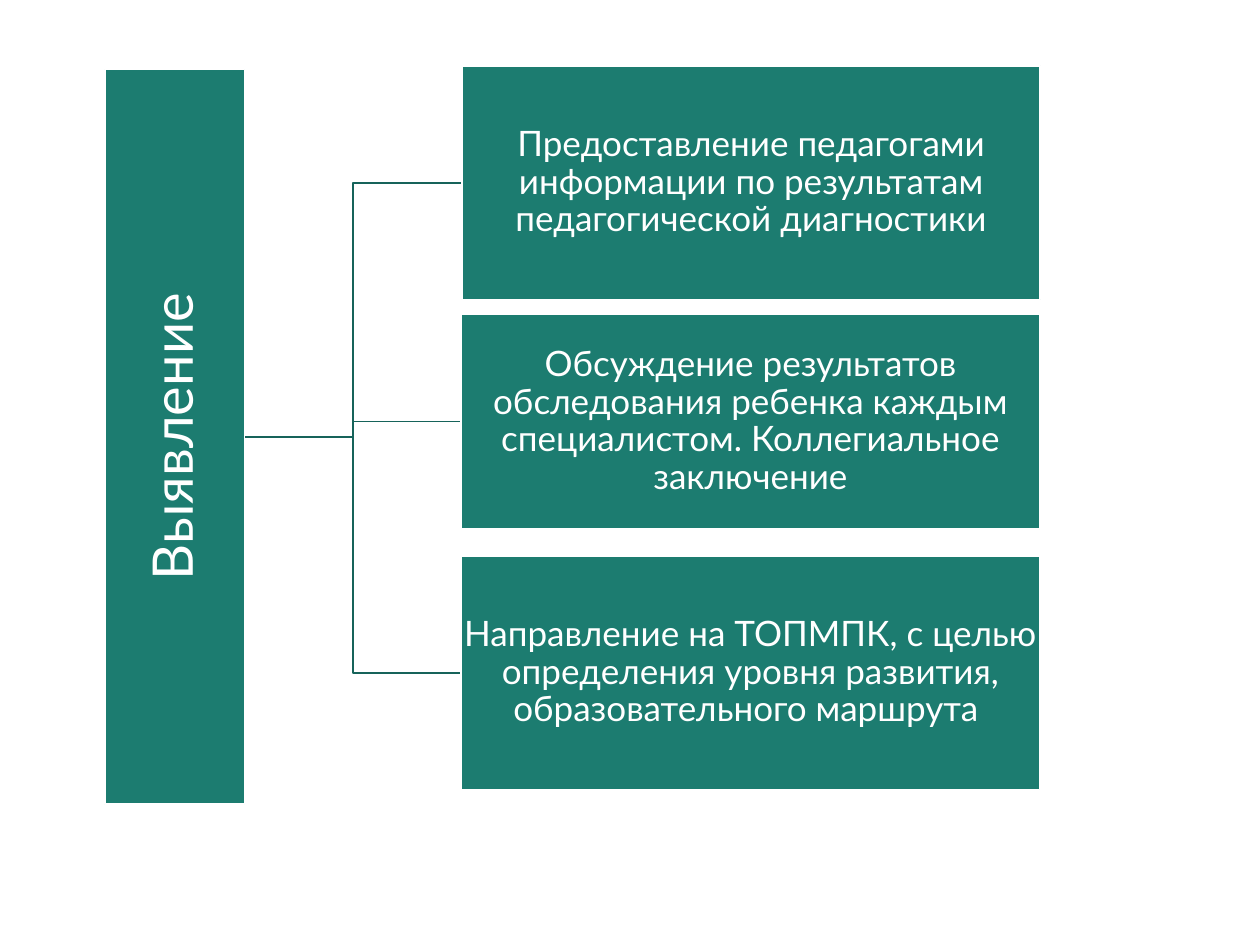
"""Build a slide with a vertical heading branching to three steps."""
from dataclasses import dataclass

import pptx
import pptx.dml.color
import pptx.enum.shapes
import pptx.enum.text
import pptx.util

Pt = pptx.util.Pt
FONT = "Lato"
TEAL = "1C7C70"
DARK_TEAL = "16635A"
WHITE = "FFFFFF"


@dataclass(frozen=True)
class Box:
    text: str
    left: float
    top: float
    width: float
    height: float
    font_size: float = 20
    inset: float = 0.9
    rotation: float = 0

    @property
    def center_x(self) -> float:
        return self.left + self.width / 2

    @property
    def center_y(self) -> float:
        return self.top + self.height / 2


STEP_LEFT, STEP_WIDTH = 263.6, 330.5
HEADING = Box("Выявление", -110.1, 209.6, 419.8, 79.9, 32, 1.6, 270)
STEPS = [
    Box("Предоставление педагогами информации по результатам педагогической диагностики",
        STEP_LEFT + 0.4, 37.6, STEP_WIDTH, 133.6),
    Box("Обсуждение результатов обследования ребенка каждым специалистом. "
        "Коллегиальное заключение",
        STEP_LEFT, 179.4, STEP_WIDTH, 123),
    Box("Направление на ТОПМПК, с целью определения уровня развития, "
        "образовательного маршрута ",
        STEP_LEFT, 317.6, STEP_WIDTH, 133.6),
]


def color(value: str) -> pptx.dml.color.RGBColor:
    return pptx.dml.color.RGBColor.from_string(value)


def set_line(shape, value: str) -> None:
    shape.shadow.inherit = False
    shape.line.color.rgb = color(value)
    shape.line.width = Pt(1)


def add_branch(slide, heading: Box, step: Box) -> None:
    start_x = heading.center_x + heading.height / 2
    middle_x = (start_x + step.left) / 2
    builder = slide.shapes.build_freeform(Pt(start_x), Pt(heading.center_y))
    corners = [(middle_x, heading.center_y), (middle_x, step.center_y),
               (step.left, step.center_y)]
    builder.add_line_segments([(Pt(x), Pt(y)) for x, y in corners], close=False)
    branch = builder.convert_to_shape()
    branch.fill.background()
    set_line(branch, DARK_TEAL)


def add_box(slide, box: Box) -> None:
    shape = slide.shapes.add_shape(
        pptx.enum.shapes.MSO_SHAPE.RECTANGLE,
        Pt(box.left), Pt(box.top), Pt(box.width), Pt(box.height))
    shape.rotation = box.rotation
    shape.fill.solid()
    shape.fill.fore_color.rgb = color(TEAL)
    set_line(shape, WHITE)
    text_frame = shape.text_frame
    text_frame.word_wrap = True
    text_frame.vertical_anchor = pptx.enum.text.MSO_ANCHOR.MIDDLE
    text_frame.margin_left = text_frame.margin_right = Pt(box.inset)
    text_frame.margin_top = text_frame.margin_bottom = Pt(box.inset)
    text_frame.text = box.text
    paragraph = text_frame.paragraphs[0]
    paragraph.alignment = pptx.enum.text.PP_ALIGN.CENTER
    paragraph.line_spacing = 0.9
    font = paragraph.runs[0].font
    font.name = FONT
    font.size = Pt(box.font_size)
    font.color.rgb = color(WHITE)


def main() -> None:
    presentation = pptx.Presentation()
    presentation.slide_width = Pt(720)
    presentation.slide_height = Pt(540)
    slide = presentation.slides.add_slide(presentation.slide_layouts[6])
    for step in reversed(STEPS):
        add_branch(slide, HEADING, step)
    for box in [HEADING, *STEPS]:
        add_box(slide, box)
    presentation.save("out.pptx")


if __name__ == "__main__":
    main()
